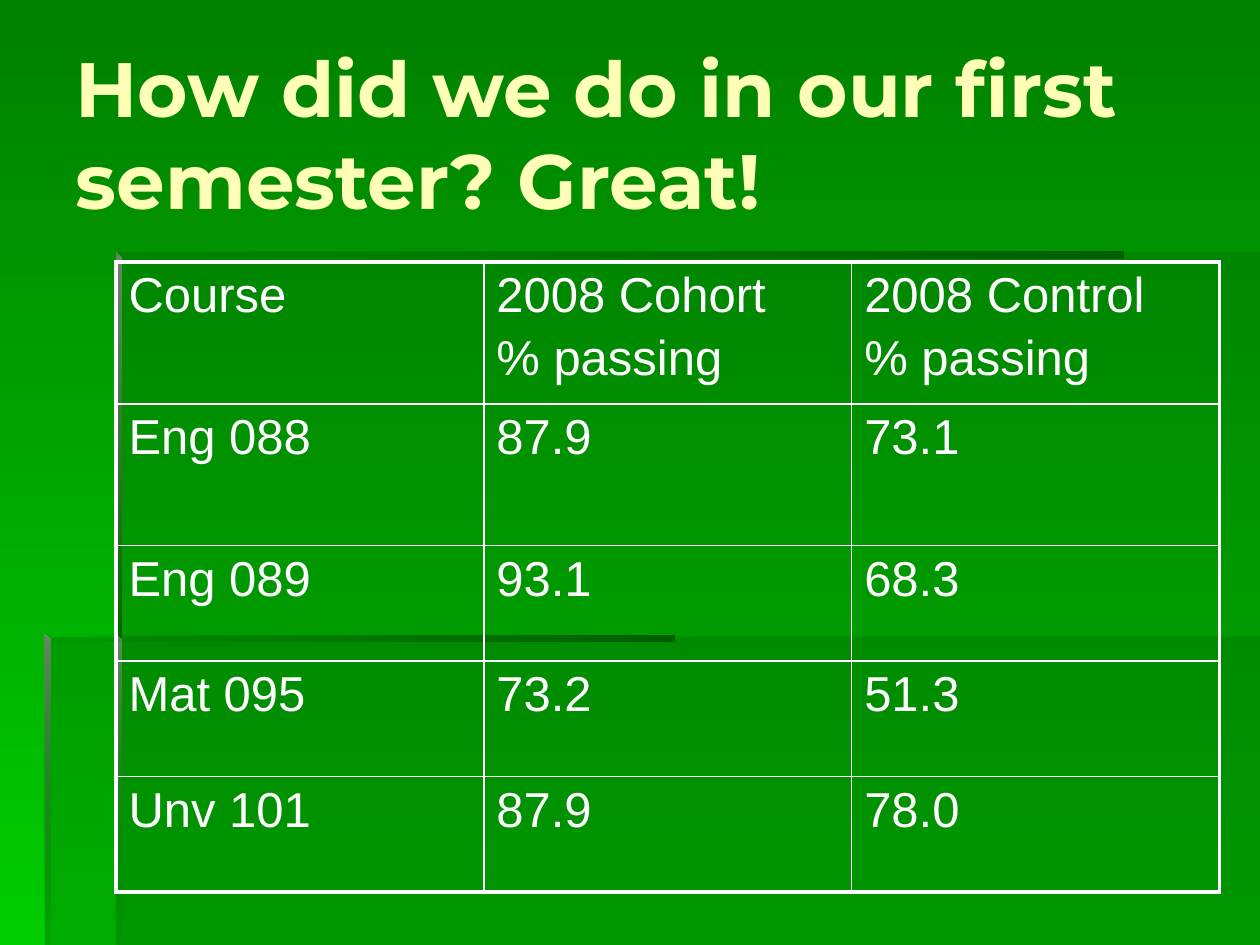
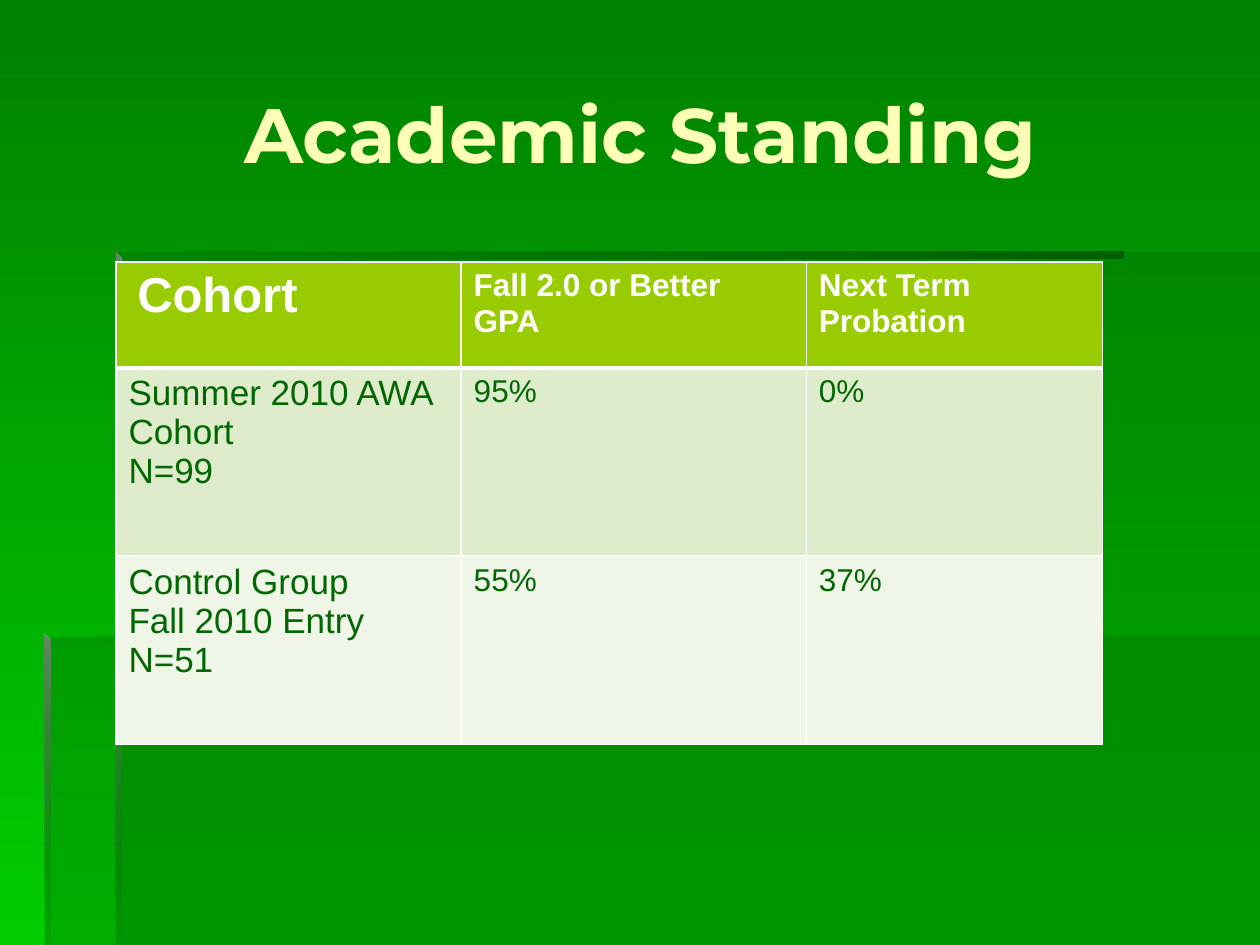
import dataclasses

import lxml.etree
import pptx
import pptx.dml.color
import pptx.enum.text
import pptx.oxml.ns
import pptx.util

qn = pptx.oxml.ns.qn
ALIGN = pptx.enum.text.PP_ALIGN


@dataclasses.dataclass(frozen=True)
class Theme:
    """Colours, fonts and type sizes of the deck."""
    top: str = "008000"
    base: str = "00CC00"
    dark: str = "006600"
    deep: str = "005E00"
    gray: str = "668666"
    cream: str = "FFFFB7"
    white: str = "FFFFFF"
    lime: str = "99CC00"
    pale: str = "DEECCC"
    mist: str = "EFF6E7"
    head_font: str = "Montserrat"
    text_font: str = "Arial"
    title: int = 44
    large: int = 28
    mid: int = 20
    small: int = 18
    gap: float = 4.5


def rgb(code):
    return pptx.dml.color.RGBColor.from_string(code)


def lines(text, size):
    """One paragraph per line, each a list of (text, size) runs."""
    return [[(line, size)] for line in text.split("\n")]


class Deck:
    COLS, ROWS = 100, 75

    def __init__(self, theme):
        self.theme = theme
        self.prs = pptx.Presentation()
        self.prs.slide_width = pptx.util.Inches(10)
        self.prs.slide_height = pptx.util.Inches(7.5)
        self.plan = self.prs.slide_layouts[5]
        self.slide = None
        self.blend(self.prs.slide_master.background.fill,
                   (theme.top, theme.base), 90)

    # Grid lengths
    def x(self, col):
        return round(self.prs.slide_width * col / self.COLS)

    def y(self, row):
        return round(self.prs.slide_height * row / self.ROWS)

    # Fills and type
    def blend(self, fill, pair, angle):
        fill.gradient()
        fill.gradient_angle = -angle % 360
        for spot, (stop, code) in enumerate(zip(fill.gradient_stops, pair)):
            stop.position = spot
            stop.color.rgb = rgb(code)

    def run(self, para, text, size, color, font, bold=False):
        run = para.add_run()
        run.text = text
        run.font.name = font
        run.font.size = pptx.util.Pt(size)
        run.font.bold = bold
        run.font.color.rgb = rgb(color)

    # Shared backdrop, kept on the layout
    def shard(self, place, dots, tints, angle=0):
        """Outline filled with one or two (colour, opacity) tints."""
        spots = [(self.x(col), self.y(row)) for col, row in dots]
        build = self.slide.shapes.build_freeform(*spots[0])
        build.add_line_segments(spots[1:], close=True)
        shape = build.convert_to_shape()
        shape.shadow.inherit = False
        shape.line.fill.background()
        if len(tints) == 1:
            shape.fill.solid()
            shape.fill.fore_color.rgb = rgb(tints[0][0])
        else:
            self.blend(shape.fill, [code for code, _ in tints], angle)
        for mark, (_, alpha) in zip(shape.element.iter(qn("a:srgbClr")), tints):
            if alpha < 100:
                lxml.etree.SubElement(mark, qn("a:alpha"), val=str(alpha * 1000))
        self.plan.shapes.element.insert(2 + place, shape.element)

    def frame(self):
        t = self.theme
        veil = [(t.dark, 30)]
        glow = [(t.dark, 0), (t.deep, 100)]

        def bar(left, top, wide):
            return [(left, top), (left, top + 0.5),
                    (left + wide, top + 0.5), (left + wide, top)]

        def post(left, top, foot):
            return [(left, top), (left, foot),
                    (left + 0.5, foot), (left + 0.5, top + 0.45)]

        def fade(alpha):
            return [(t.gray, 100), (t.dark, alpha)]

        parts = [
            ([(9.2, 50.5), (9.2, 75), (100, 75), (100, 50.5)], veil, 0),
            ([(9.4, 50.6), (3.6, 50.6), (3.6, 75), (100, 75),
              (100, 20), (9.4, 20)], veil, 0),
            (bar(9.2, 20, 80), glow, 0),
            (post(9.2, 20, 51), fade(100), 90),
            (post(9.15, 50.4, 75), fade(0), 90),
            (bar(3.5, 50.4, 50), glow, 0),
            (post(3.5, 50.4, 75), fade(10), 90),
        ]
        for place, part in enumerate(parts):
            self.shard(place, *part)

    # Slide with its title
    def page(self, title, align=ALIGN.LEFT):
        self.slide = self.prs.slides.add_slide(self.plan)
        box = self.slide.shapes.title
        box.left, box.top = self.x(5), self.y(2.7)
        box.width, box.height = self.x(91.7), self.y(15.7)
        text = box.text_frame
        text.word_wrap = True
        text.auto_size = pptx.enum.text.MSO_AUTO_SIZE.NONE
        text.vertical_anchor = pptx.enum.text.MSO_ANCHOR.MIDDLE
        para = text.paragraphs[0]
        para.alignment = align
        self.run(para, title, self.theme.title, self.theme.cream,
                 self.theme.head_font, True)

    # Table with ruled cells
    def rule(self, props, side, width):
        line = lxml.etree.SubElement(props, qn("a:ln" + side),
                                     w=str(pptx.util.Pt(width)))
        fill = lxml.etree.SubElement(line, qn("a:solidFill"))
        lxml.etree.SubElement(fill, qn("a:srgbClr"), val=self.theme.white)

    def table(self, cells, wides, highs, looks, rim=1, head=1, gap=0):
        """looks holds (fill, text colour, bold) for each row."""
        frame = self.slide.shapes.add_table(
            len(highs), len(wides), self.x(9.2), self.y(20.8),
            self.x(sum(wides)), self.y(sum(highs)))
        grid = frame.table
        grid.first_row = grid.horz_banding = False
        for col, wide in zip(grid.columns, wides):
            col.width = self.x(wide)
        for row, high in zip(grid.rows, highs):
            row.height = self.y(high)

        last_row, last_col = len(highs) - 1, len(wides) - 1
        for spot, node in enumerate(frame.element.iter(qn("a:tc"))):
            r, c = divmod(spot, len(wides))
            props = node.get_or_add_tcPr()
            self.rule(props, "L", rim if c == 0 else 1)
            self.rule(props, "R", rim if c == last_col else 1)
            self.rule(props, "T", rim if r == 0 else head if r == 1 else 1)
            self.rule(props, "B", rim if r == last_row else head if r == 0 else 1)
            self.fill(grid.cell(r, c), cells[r][c], looks[r], gap)

    def fill(self, cell, paras, look, gap):
        back, color, bold = look
        if back:
            cell.fill.solid()
            cell.fill.fore_color.rgb = rgb(back)
        else:
            cell.fill.background()
        text = cell.text_frame
        for spot, runs in enumerate(paras):
            para = text.add_paragraph() if spot else text.paragraphs[0]
            if spot and gap:
                para.space_before = pptx.util.Pt(gap)
            for words, size in runs:
                self.run(para, words, size, color, self.theme.text_font, bold)


def main():
    t = Theme()
    deck = Deck(t)

    # Pass rates
    deck.page("How did we do in our first semester? Great!")
    deck.frame()
    rates = [
        ("Course", "2008 Cohort\n% passing", "2008 Control\n% passing"),
        ("Eng 088", "87.9", "73.1"),
        ("Eng 089", "93.1", "68.3"),
        ("Mat 095", "73.2", "51.3"),
        ("Unv 101", "87.9", "78.0"),
    ]
    deck.table([[lines(text, t.large) for text in row] for row in rates],
               [29.2] * 3, [11.25] * 2 + [9.17] * 3,
               [(None, t.white, False)] * 5, rim=2.25, gap=t.gap)

    # Standing by group
    deck.page("Academic Standing", ALIGN.CENTER)
    heads = [[[(" ", t.small), ("Cohort", t.large)]],
             lines("Fall 2.0 or Better GPA", t.small),
             lines("Next Term\nProbation", t.small)]
    groups = [("Summer 2010 AWA Cohort\nN=99", "95%", "0%"),
              ("Control Group\nFall 2010 Entry\nN=51", "55%", "37%")]
    body = [[lines(name, t.mid)] + [lines(share, t.small) for share in shares]
            for name, *shares in groups]
    deck.table([heads] + body, [27.4, 27.4, 23.5], [8.4, 14.95, 14.95],
               [(t.lime, t.white, True), (t.pale, t.dark, False),
                (t.mist, t.dark, False)], head=3)

    deck.prs.save("out.pptx")


if __name__ == "__main__":
    main()
